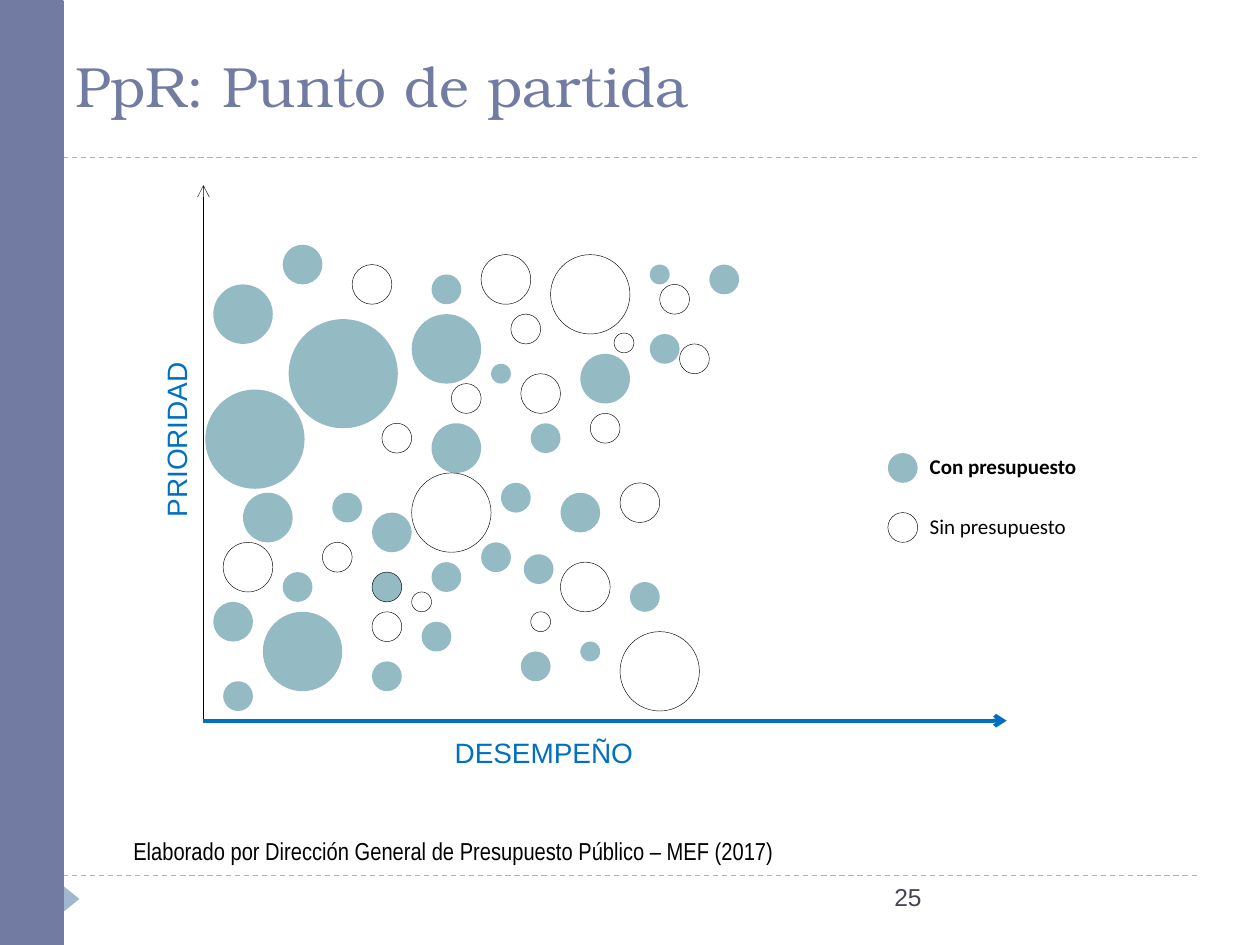
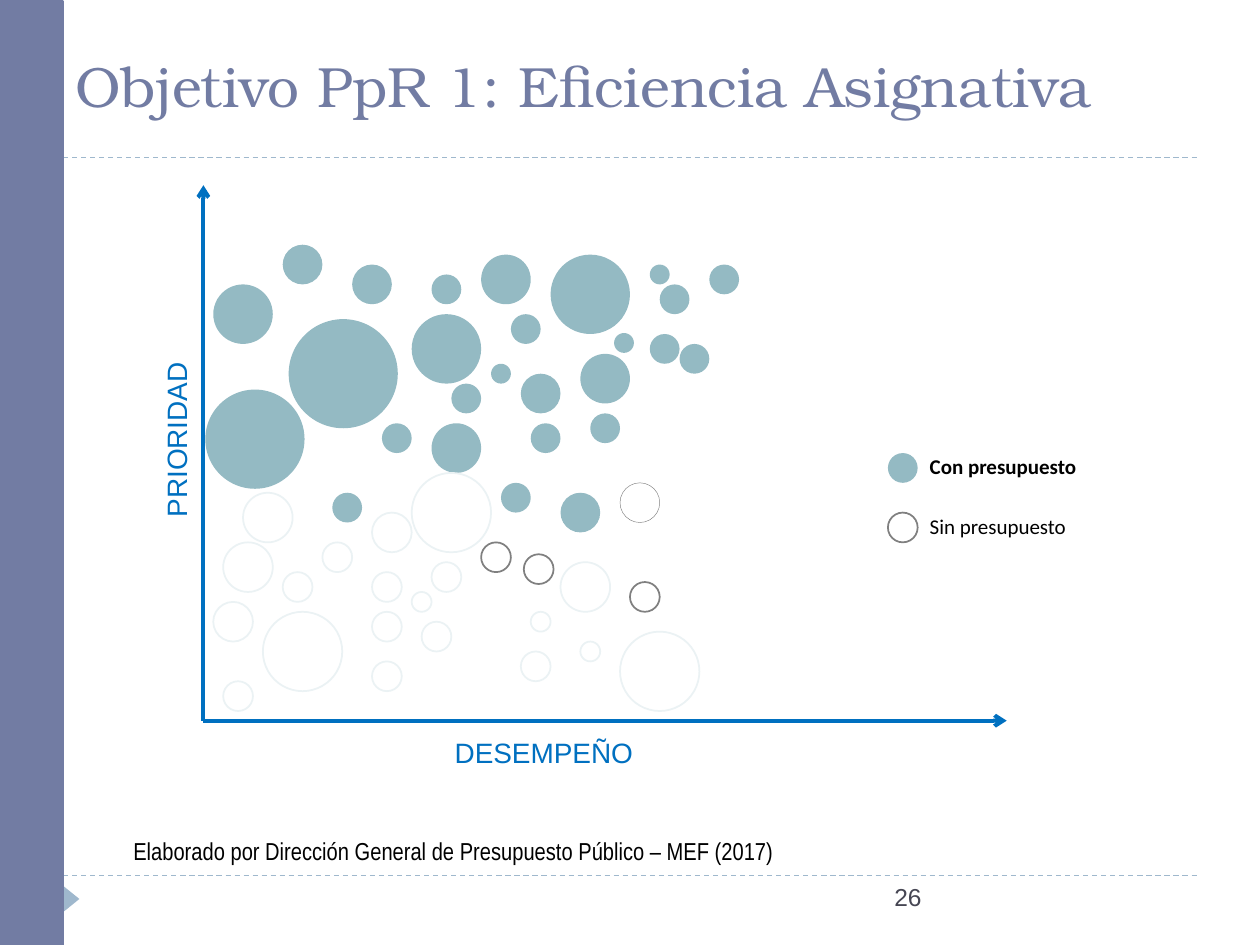
from dataclasses import dataclass
from typing import NamedTuple, Optional

from lxml.etree import SubElement
from pptx import Presentation
from pptx.dml.color import RGBColor as Color
from pptx.enum.dml import MSO_LINE_DASH_STYLE as Dash
from pptx.enum.shapes import MSO_CONNECTOR as Connector, MSO_SHAPE as Preset
from pptx.enum.text import MSO_ANCHOR as Anchor
from pptx.oxml.ns import qn
from pptx.util import Inches, Pt

SLIDE_WIDTH = Inches(10)
SLIDE_HEIGHT = Inches(7.5)
COLUMNS = 127
UNIT = SLIDE_WIDTH / COLUMNS
ROWS = SLIDE_HEIGHT / UNIT


@dataclass(frozen=True)
class Theme:
    band: str = "727CA3"
    rule: str = "9FB8CD"
    number: str = "464653"
    axis: str = "0070C0"
    bubble: str = "94BAC3"
    faded: str = "EBF2F4"
    grey: str = "808080"
    black: str = "000000"
    white: str = "FFFFFF"
    title_font: str = "TeX Gyre Bonum"
    label_font: str = "Arial"
    legend_font: str = "Calibri"
    caption_font: str = "Arial Narrow"
    title_size: float = 32.4
    axis_size: float = 16
    small_size: float = 14
    legend_size: float = 12
    hairline: float = 0.25
    rule_line: float = 0.75
    thin_line: float = 1
    band_line: float = 1.5
    axis_line: float = 2.25


THEME = Theme()


class Frame(NamedTuple):
    left: float
    top: float
    width: float
    height: float


class Bubble(NamedTuple):
    column: float
    row: float
    size: float


class Style(NamedTuple):
    fill: Optional[str] = None
    line: Optional[str] = None
    weight: float = 0


class BubbleGroup(NamedTuple):
    before: Style
    after: Style
    bubbles: list[Bubble]


class PageContent(NamedTuple):
    title: str
    number: int
    priority_axis: Style
    unfunded_key: Style
    funding_applied: bool


FUNDED = Style(fill=THEME.bubble)
FUNDED_OUTLINED = Style(THEME.bubble, THEME.black, THEME.hairline)
UNFUNDED = Style(line=THEME.black, weight=THEME.hairline)
DISCARDED = Style(line=THEME.faded, weight=THEME.thin_line)
WAITING = Style(THEME.white, THEME.grey, THEME.thin_line)
WAITING_THIN = Style(line=THEME.grey, weight=THEME.hairline)
UNFUNDED_GREY = Style(line=THEME.grey, weight=THEME.thin_line)
AXIS_BLACK = Style(line=THEME.black, weight=THEME.hairline)
AXIS_BLUE = Style(line=THEME.axis, weight=THEME.axis_line)
BAND = Style(THEME.band, THEME.band, THEME.band_line)
RULE = Style(line=THEME.rule, weight=THEME.rule_line)

BAND_WIDTH = 6.35
RULE_ROWS = (88.27, 15.88)
AXIS_LEFT, AXIS_RIGHT = 20.5, 101.47
AXIS_TOP, AXIS_BOTTOM = 18.67, 72.64
LEGEND_FRAME = Frame(92.46, 45.09, 19.94, 3.81)
LEGEND_BUBBLE = Bubble(69, 27, 3)
LEGEND_STEP = 6


def group(before: Style, after: Style, *places: tuple) -> BubbleGroup:
    return BubbleGroup(before, after, [Bubble(*place) for place in places])


GROUPS = [
    group(FUNDED, FUNDED,
          (8, 6, 4), (38, 17, 5), (29, 18, 2), (8.6, 13.5, 11), (23, 9, 3),
          (1, 10, 6), (13, 31, 3), (0.2, 20.6, 10), (36, 31, 4), (45, 15, 3),
          (23, 24, 5), (21, 13, 7), (30, 30, 3), (45, 8, 2), (51, 8, 3),
          (33, 24, 3)),
    group(FUNDED, DISCARDED,
          (4, 31, 5), (17, 48, 3), (22, 44, 3), (23, 38, 3), (38, 46, 2),
          (6, 43, 8), (8, 39, 3), (17, 33, 4), (1, 42, 4), (2, 50, 3),
          (32, 47, 3)),
    group(FUNDED_OUTLINED, DISCARDED, (17, 39, 3)),
    group(FUNDED, WAITING, (32.3, 37.2, 3), (43, 40, 3), (28, 36, 3)),
    group(UNFUNDED, FUNDED,
          (28, 7, 5), (31, 13, 3), (18, 24, 3), (46, 10, 3), (41.4, 14.9, 2),
          (35, 7, 8), (48, 16, 3), (39, 23, 3), (15, 8, 4), (32, 19, 4),
          (25, 20, 3)),
    group(UNFUNDED, DISCARDED,
          (2, 36, 5), (12, 36, 3), (33, 43, 2), (42, 45, 8), (36, 38, 5),
          (17, 43, 3), (21, 41, 2), (21, 29, 8)),
    group(UNFUNDED, WAITING_THIN, (42, 30, 4)),
]

PAGES = [
    PageContent("PpR: Punto de partida", 25, AXIS_BLACK, UNFUNDED, False),
    PageContent("Objetivo PpR 1: Eficiencia Asignativa", 26, AXIS_BLUE,
                UNFUNDED_GREY, True),
]


def grid(*lengths: float) -> list[int]:
    return [round(length * UNIT) for length in lengths]


def add_figure(page, preset: Preset, frame: Frame, style: Style,
               rotation: float = 0) -> None:
    shape = page.shapes.add_shape(preset, *grid(*frame))
    shape.shadow.inherit = False
    shape.rotation = rotation
    if style.fill:
        shape.fill.solid()
        shape.fill.fore_color.rgb = Color.from_string(style.fill)
    else:
        shape.fill.background()
    if style.line:
        shape.line.color.rgb = Color.from_string(style.line)
        shape.line.width = Pt(style.weight)
    else:
        shape.line.fill.background()


def add_line(page, start: tuple, end: tuple, style: Style,
             dashed: bool = False, arrow: bool = False) -> None:
    connector = page.shapes.add_connector(
        Connector.STRAIGHT, *grid(*start, *end))
    connector.line.color.rgb = Color.from_string(style.line)
    connector.line.width = Pt(style.weight)
    if dashed:
        connector.line.dash_style = Dash.DASH
    properties = connector.element.spPr
    if arrow:
        SubElement(properties.find(qn("a:ln")), qn("a:tailEnd"), type="arrow")
    SubElement(properties, qn("a:effectLst"))


def add_text(page, text: str, frame: Frame, *, font: str, size: float,
             color: str, bold: bool = False, rotation: float = 0,
             anchor: Anchor = Anchor.TOP) -> None:
    box = page.shapes.add_textbox(*grid(*frame))
    box.rotation = rotation
    box.text_frame.word_wrap = True
    box.text_frame.vertical_anchor = anchor
    para = box.text_frame.paragraphs[0]
    span = para.add_run()
    span.text = text
    span.font.name = font
    span.font.size = Pt(size)
    span.font.bold = bold
    span.font.color.rgb = Color.from_string(color)


def add_bubble(page, bubble: Bubble, style: Style) -> None:
    frame = Frame(AXIS_LEFT + bubble.column, AXIS_TOP + bubble.row,
                  bubble.size, bubble.size)
    add_figure(page, Preset.OVAL, frame, style)


def draw_layout(page, content: PageContent) -> None:
    for row in RULE_ROWS:
        add_line(page, (BAND_WIDTH, row), (COLUMNS - BAND_WIDTH, row), RULE,
                 dashed=True)
    add_figure(page, Preset.ISOSCELES_TRIANGLE,
               Frame(5.84, 89.79, 2.67, 1.65), Style(THEME.rule), rotation=90)
    add_figure(page, Preset.RECTANGLE,
               Frame(0, 0.13, BAND_WIDTH, ROWS - 0.13), BAND)
    add_text(page, content.title,
             Frame(BAND_WIDTH, 3.81, COLUMNS - 2 * BAND_WIDTH, 8.76),
             font=THEME.title_font, size=THEME.title_size, color=THEME.band,
             anchor=Anchor.BOTTOM)
    add_text(page, str(content.number), Frame(88.9, RULE_ROWS[0], 31.75, 5.08),
             font=THEME.label_font, size=THEME.small_size, color=THEME.number)
    add_text(page,
             "Elaborado por Dirección General de Presupuesto Público – MEF (2017)",
             Frame(12.19, 83.69, 72.01, 4.32), font=THEME.caption_font,
             size=THEME.small_size, color=THEME.black)


def draw_axes(page, priority_axis: Style) -> None:
    origin = (AXIS_LEFT, AXIS_BOTTOM)
    add_line(page, origin, (AXIS_LEFT, AXIS_TOP), priority_axis, arrow=True)
    add_line(page, origin, (AXIS_RIGHT, AXIS_BOTTOM), AXIS_BLUE, arrow=True)
    for text, frame, rotation in (
            ("PRIORIDAD", Frame(7.87, 41.15, 19.81, 4.7), 270),
            ("DESEMPEÑO", Frame(44.58, 73.53, 21.97, 4.7), 0)):
        add_text(page, text, frame, font=THEME.label_font,
                 size=THEME.axis_size, color=THEME.axis, rotation=rotation)


def draw_bubbles(page, funding_applied: bool) -> None:
    for before, after, bubbles in GROUPS:
        for bubble in bubbles:
            add_bubble(page, bubble, after if funding_applied else before)


def draw_legend(page, unfunded_key: Style) -> None:
    entries = (("Con presupuesto", FUNDED, True),
               ("Sin presupuesto", unfunded_key, False))
    for index, (text, style, bold) in enumerate(entries):
        shift = index * LEGEND_STEP
        add_bubble(page, LEGEND_BUBBLE._replace(row=LEGEND_BUBBLE.row + shift),
                   style)
        add_text(page, text, LEGEND_FRAME._replace(top=LEGEND_FRAME.top + shift),
                 font=THEME.legend_font, size=THEME.legend_size,
                 color=THEME.black, bold=bold)


def main() -> None:
    deck = Presentation()
    deck.slide_width, deck.slide_height = SLIDE_WIDTH, SLIDE_HEIGHT
    for content in PAGES:
        page = deck.slides.add_slide(deck.slide_layouts[6])
        draw_layout(page, content)
        draw_axes(page, content.priority_axis)
        draw_bubbles(page, content.funding_applied)
        draw_legend(page, content.unfunded_key)
    deck.save("out.pptx")


if __name__ == "__main__":
    main()
